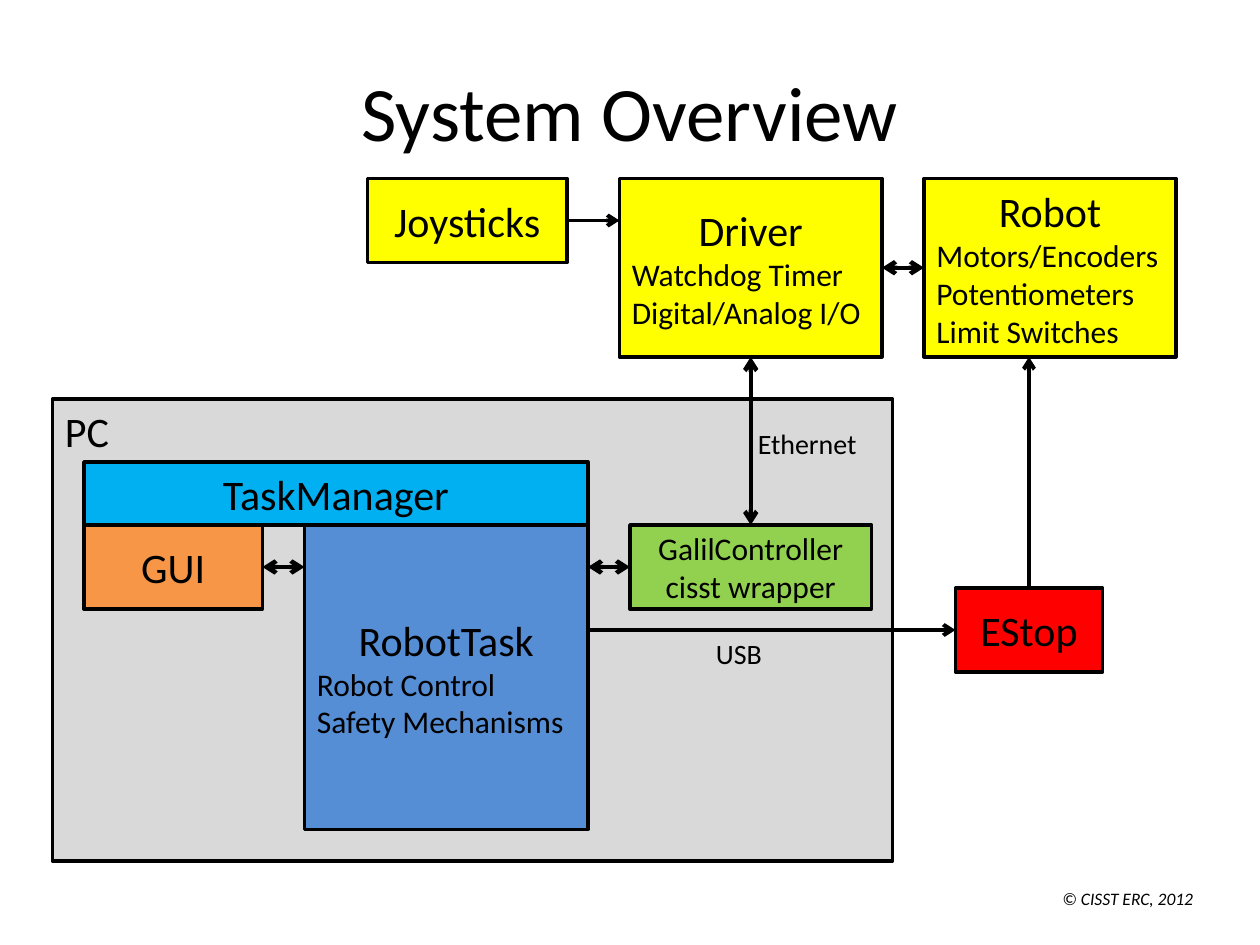
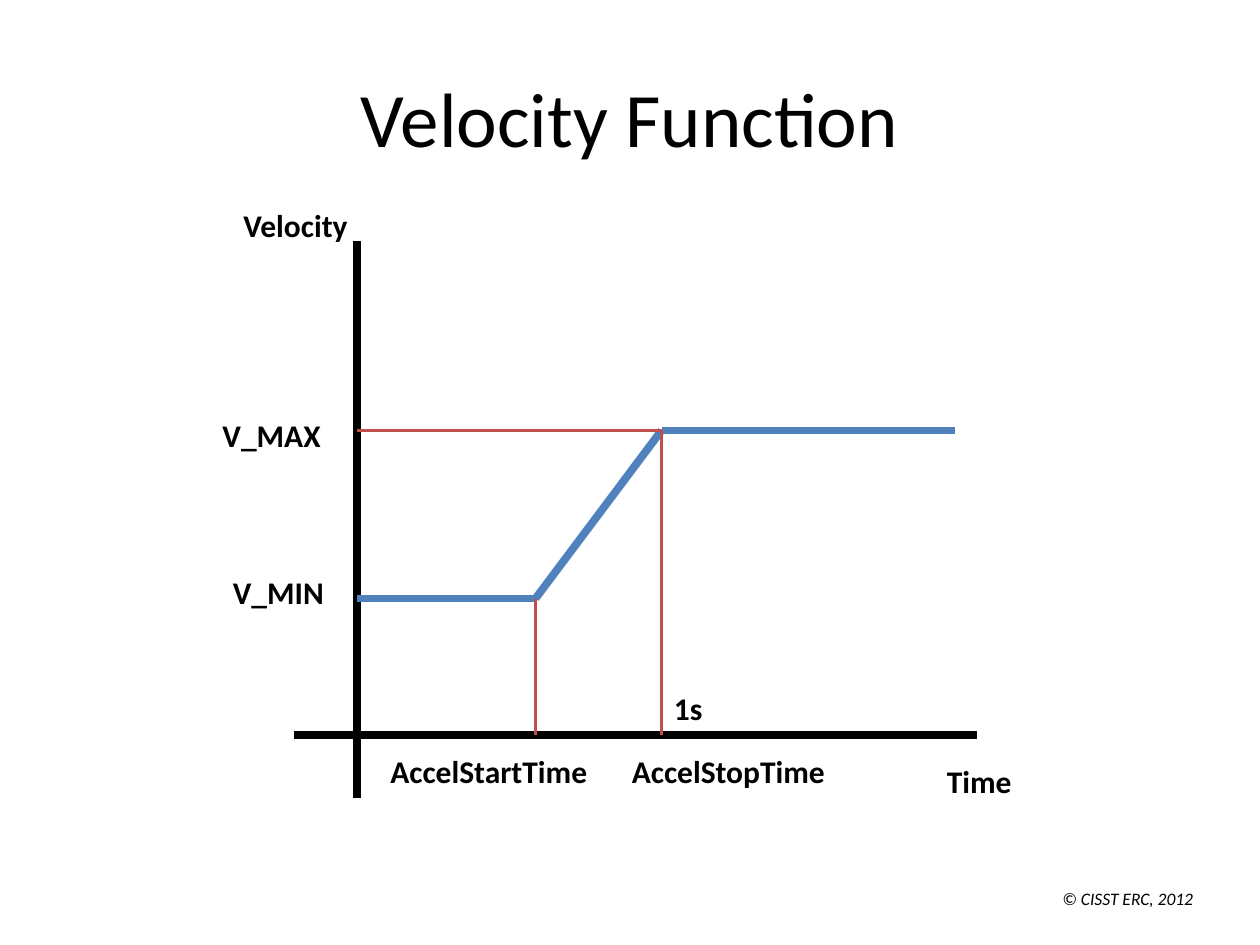
from lxml import etree
from pptx import Presentation
from pptx.dml.color import RGBColor
from pptx.enum import shapes, text
from pptx.oxml.ns import qn
from pptx.util import Pt

BLACK = RGBColor(0x00, 0x00, 0x00)
GREY = RGBColor(0xD9, 0xD9, 0xD9)
SKY = RGBColor(0x00, 0xB0, 0xF0)
BLUE = RGBColor(0x55, 0x8E, 0xD5)
GREEN = RGBColor(0x92, 0xD0, 0x50)
ORANGE = RGBColor(0xF7, 0x96, 0x46)
YELLOW = RGBColor(0xFF, 0xFF, 0x00)
RED = RGBColor(0xFF, 0x00, 0x00)
CURVE_BLUE = RGBColor(0x4F, 0x81, 0xBD)
GUIDE_RED = RGBColor(0xC0, 0x50, 0x4D)

FONT = "Calibri"
TITLE_ONLY = 5
TOP, BOTTOM, LEFT, RIGHT = 0, 2, 1, 3
CENTER, FLUSH_LEFT = text.PP_ALIGN.CENTER, text.PP_ALIGN.LEFT


def write(para, words, size, align=FLUSH_LEFT, bold=False, italic=False):
    para.alignment = align
    span = para.add_run()
    span.text = words
    span.font.name = FONT
    span.font.size = Pt(size)
    span.font.bold = bold
    span.font.italic = italic
    span.font.color.rgb = BLACK


def add_label(page, words, area, size, wrap=True, **style):
    box = page.shapes.add_textbox(*map(Pt, area))
    box.text_frame.word_wrap = wrap
    box.text_frame.auto_size = text.MSO_AUTO_SIZE.SHAPE_TO_FIT_TEXT
    write(box.text_frame.paragraphs[0], words, size, **style)


def add_page(deck, title, title_top):
    """Add a slide with its title and the shared copyright line."""
    page = deck.slides.add_slide(deck.slide_layouts[TITLE_ONLY])
    heading = page.shapes.title
    heading.left, heading.top = Pt(36), Pt(title_top)
    heading.width, heading.height = Pt(648), Pt(90)
    heading.text_frame.vertical_anchor = text.MSO_ANCHOR.MIDDLE
    write(heading.text_frame.paragraphs[0], title, 44, CENTER)
    add_label(page, "© CISST ERC, 2012", (600, 504, 120, 19.5), 10, italic=True)
    return page


def add_block(page, area, fill, heading=(), details=(), size=24):
    """Draw an outlined box with centred heading lines and left-aligned details."""
    block = page.shapes.add_shape(shapes.MSO_SHAPE.RECTANGLE, *map(Pt, area))
    block.shadow.inherit = False
    block.fill.solid()
    block.fill.fore_color.rgb = fill
    block.line.color.rgb = BLACK
    block.line.width = Pt(2)
    frame = block.text_frame
    frame.word_wrap = True
    frame.vertical_anchor = text.MSO_ANCHOR.MIDDLE
    lines = [(words, size, CENTER) for words in heading]
    lines += [(words, 18, FLUSH_LEFT) for words in details]
    for index, line in enumerate(lines):
        para = frame.add_paragraph() if index else frame.paragraphs[0]
        write(para, *line)
    return block


def add_line(page, start, end, width, color=BLACK):
    line = page.shapes.add_connector(
        shapes.MSO_CONNECTOR.STRAIGHT, *map(Pt, start + end))
    line.line.color.rgb = color
    line.line.width = Pt(width)
    etree.SubElement(line.element.spPr, qn("a:effectLst"))
    return line


def add_arrow(page, start, end, both=False, source=None, target=None):
    """Draw an arrow; source and target are (block, side) pairs to join."""
    arrow = add_line(page, start, end, 2.5 if both else 2.25)
    outline = arrow.element.spPr.find(qn("a:ln"))
    for tip in ("a:headEnd", "a:tailEnd") if both else ("a:tailEnd",):
        etree.SubElement(outline, qn(tip), type="arrow")
    if source:
        arrow.begin_connect(*source)
    if target:
        arrow.end_connect(*target)


def build_overview(deck):
    page = add_page(deck, "System Overview", 18)

    add_block(page, (30, 228, 480, 264), GREY)
    add_label(page, "PC", (30, 228, 42, 36), 24)
    add_block(page, (48, 264, 288, 36), SKY, ["TaskManager"])
    add_block(page, (174, 300, 162, 174), BLUE, ["RobotTask"],
              ["Robot Control", "Safety Mechanisms"])
    wrapper = add_block(page, (360, 300, 138, 48), GREEN,
                        ["GalilController", "cisst wrapper"], size=18)
    gui = add_block(page, (48, 300, 102, 48), ORANGE, ["GUI"])

    joysticks = add_block(page, (210, 102, 114, 48), YELLOW, ["Joysticks"])
    driver = add_block(page, (354, 102, 150, 102), YELLOW, ["Driver"],
                       ["Watchdog Timer", "Digital/Analog I/O"])
    robot = add_block(page, (528, 102, 144, 102), YELLOW, ["Robot"],
                      ["Motors/Encoders", "Potentiometers", "Limit Switches"])
    estop = add_block(page, (546, 336, 84, 48), RED, ["EStop"])

    add_arrow(page, (429, 204), (429, 300), True, (driver, BOTTOM), (wrapper, TOP))
    add_arrow(page, (504, 153), (528, 153), True, (driver, RIGHT), (robot, LEFT))
    add_arrow(page, (336, 324), (360, 324), True, target=(wrapper, LEFT))
    add_arrow(page, (174, 324), (150, 324), True, target=(gui, RIGHT))
    add_arrow(page, (324, 126), (354, 126), source=(joysticks, RIGHT))
    add_arrow(page, (588, 336), (588, 204), source=(estop, TOP))
    add_arrow(page, (336, 360), (546, 360), target=(estop, LEFT))

    add_label(page, "Ethernet", (426, 240, 72, 26.5), 16)
    add_label(page, "USB", (402, 360, 42, 26.5), 16)


def build_velocity(deck):
    page = add_page(deck, "Velocity Function", 21.6)
    axis_x, axis_y = 204, 420
    start_x, stop_x, end_x = 306, 378, 546
    min_y, max_y = 342, 246

    add_line(page, (axis_x, 138), (axis_x, 456), 4.5)
    add_line(page, (168, axis_y), (558, axis_y), 4.5)

    curve = [(axis_x, min_y), (start_x, min_y), (stop_x, max_y), (end_x, max_y)]
    for start, end in zip(curve, curve[1:]):
        add_line(page, start, end, 4.5, CURVE_BLUE)

    guides = [
        ((start_x, min_y), (start_x, axis_y)),
        ((stop_x, max_y), (stop_x, axis_y)),
        ((stop_x, max_y), (axis_x, max_y)),
    ]
    for start, end in guides:
        add_line(page, start, end, 1.5, GUIDE_RED)

    labels = [
        ("Velocity", 132, 114, 74),
        ("Time", 534, 432, 52),
        ("V_MIN", 126, 324, 67),
        ("V_MAX", 120, 234, 71),
        ("AccelStartTime", 216, 426, 128),
        ("AccelStopTime", 354, 426, 125),
        ("1s", 378, 390, 31),
    ]
    for words, left, top, width in labels:
        add_label(page, words, (left, top, width, 29), 18, wrap=False, bold=True)


def main():
    deck = Presentation()
    deck.slide_width, deck.slide_height = Pt(720), Pt(540)
    build_overview(deck)
    build_velocity(deck)
    deck.save("out.pptx")


if __name__ == "__main__":
    main()
